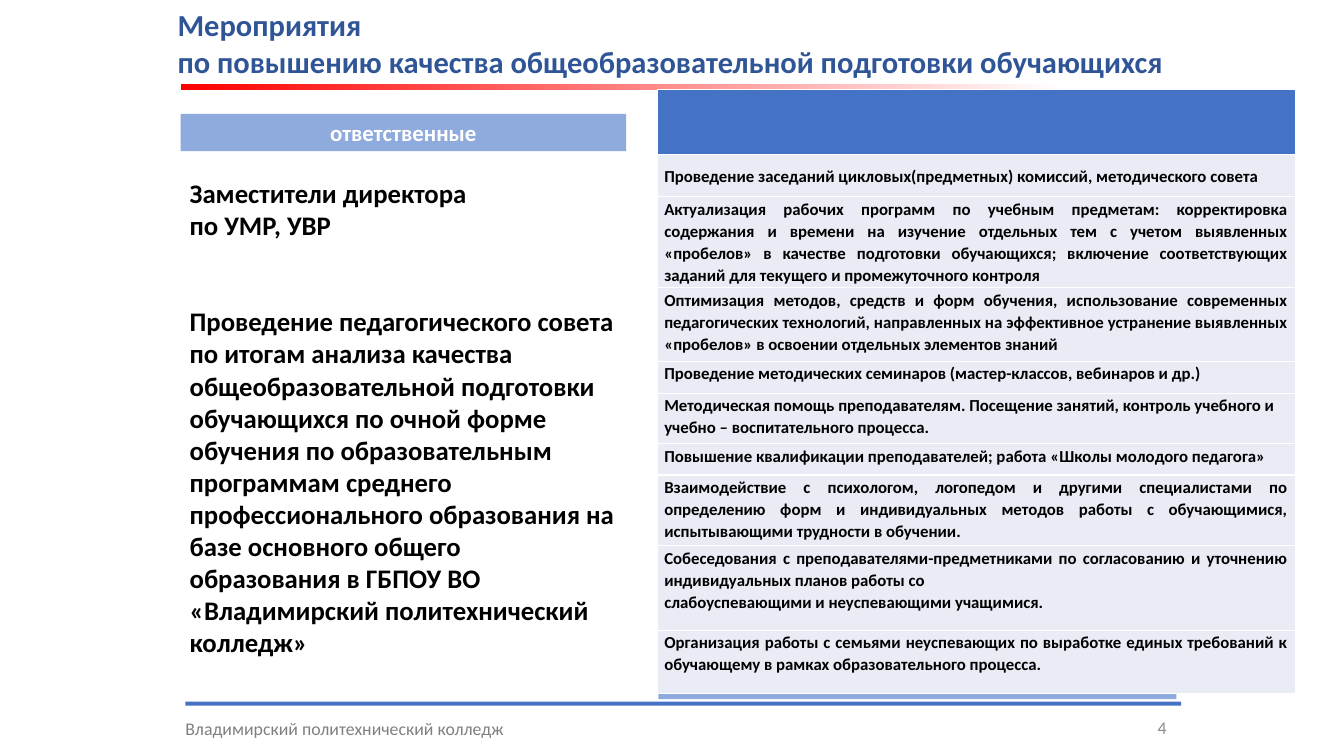
"""Build the slide on measures that improve general education training."""
from pptx import Presentation
from pptx.dml.color import RGBColor
from pptx.enum.shapes import MSO_SHAPE as Shape
from pptx.enum.text import MSO_ANCHOR as Anchor, MSO_AUTO_SIZE as AutoSize, PP_ALIGN as Align
from pptx.oxml.xmlchemy import OxmlElement
from pptx.util import Cm, Pt

BLUE = RGBColor(0x44, 0x72, 0xC4)
LIGHT_BLUE = RGBColor(0x8F, 0xAA, 0xDC)
DARK_BLUE = RGBColor(0x2F, 0x55, 0x97)
PALE = RGBColor(0xE9, 0xEB, 0xF5)
RED = RGBColor(0xFF, 0, 0)
WHITE = RGBColor(0xFF, 0xFF, 0xFF)
BLACK = RGBColor(0, 0, 0)
GREY = RGBColor(0x80, 0x80, 0x80)
NUMBER_GREY = RGBColor(0x8C, 0x8C, 0x8C)


def place(box, left, top, width, height):
    box.left, box.top, box.width, box.height = Cm(left), Cm(top), Cm(width), Cm(height)


def style(para, size, color, bold=True, align=Align.LEFT):
    para.alignment = align
    para.font.name, para.font.size, para.font.bold = "Calibri", Pt(size), bold
    para.font.color.rgb = color


deck = Presentation()
deck.slide_width, deck.slide_height = Cm(33.87), Cm(19.05)
page = deck.slides.add_slide(deck.slide_layouts[1])

title = page.shapes.title
place(title, 4.22, 0.03, 26.04, 3.05)
title.text_frame.text = "Мероприятия\nпо повышению качества общеобразовательной подготовки обучающихся"
title.text_frame.vertical_anchor = Anchor.TOP
title.text_frame.auto_size = AutoSize.NONE
for para in title.text_frame.paragraphs:
    style(para, 21.8, DARK_BLUE)
    para.space_before = Pt(0)

body = page.placeholders[1]
place(body, 4.55, 4.32, 11.23, 13.26)
frame = body.text_frame
frame.text = (
    "Заместители директора\nпо УМР, УВР\n"
    "Проведение педагогического совета по итогам анализа качества общеобразовательной "
    "подготовки обучающихся по очной форме обучения по образовательным программам среднего "
    "профессионального образования на базе основного общего образования в ГБПОУ ВО "
    "«Владимирский политехнический колледж»"
)
frame.auto_size = AutoSize.NONE
frame.margin_left = frame.margin_right = Cm(0.23)
for para, gap in zip(frame.paragraphs, (0, 0, 46)):
    style(para, 19.1, BLACK)
    para.space_before = Pt(gap)
    properties = para._p.get_or_add_pPr()
    properties.set("marL", "0")
    properties.set("indent", "0")
    properties.append(OxmlElement("a:buNone"))

bars = []
for left, top, width, height, color in (
    (16.59, 4.72, 13.06, 12.9, LIGHT_BLUE),
    (4.67, 17.68, 25.1, 0.1, BLUE),
    (4.55, 2.87, 11.23, 0.94, LIGHT_BLUE),
    (4.55, 2.13, 22.23, 0.13, RED),
):
    bar = page.shapes.add_shape(Shape.RECTANGLE, Cm(left), Cm(top), Cm(width), Cm(height))
    bar.shadow.inherit = False
    bar.fill.solid()
    bar.fill.fore_color.rgb = color
    bar.line.fill.background()
    bars.append(bar)

label, underline = bars[2:]
label.text_frame.text = "ответственные"
style(label.text_frame.paragraphs[0], 16.3, WHITE, align=Align.CENTER)
underline.fill.gradient()
underline.fill.gradient_angle = 0
for stop, color in zip(underline.fill.gradient_stops, (RED, WHITE)):
    stop.color.rgb = color

for text, left, width, height, inset, color, align in (
    ("Владимирский политехнический колледж", 4.67, 8.86, 1.09, 0, GREY, Align.LEFT),
    ("4", 23.93, 5.72, 1.02, 0.25, NUMBER_GREY, Align.RIGHT),
):
    box = page.shapes.add_textbox(Cm(left), Cm(17.81), Cm(width), Cm(height))
    frame = box.text_frame
    frame.word_wrap = True
    frame.vertical_anchor = Anchor.MIDDLE
    frame.margin_left = Cm(inset)
    frame.text = text
    style(frame.paragraphs[0], 12.7, color, False, align)

measures = [
    (1.63, ""),
    (1.07, "Проведение заседаний цикловых(предметных) комиссий, методического совета"),
    (2.29, "Актуализация рабочих программ по учебным предметам: корректировка содержания и времени "
           "на изучение отдельных тем с учетом выявленных «пробелов» в качестве подготовки обучающихся; "
           "включение соответствующих заданий для текущего и промежуточного контроля"),
    (1.85, "Оптимизация методов, средств и форм обучения, использование современных педагогических "
           "технологий, направленных на эффективное устранение выявленных «пробелов» в освоении "
           "отдельных элементов знаний"),
    (0.81, "Проведение методических семинаров (мастер-классов, вебинаров и др.)"),
    (1.27, "Методическая помощь преподавателям. Посещение занятий, контроль учебного и "
           "учебно – воспитательного процесса."),
    (0.79, "Повышение квалификации преподавателей; работа «Школы молодого педагога»"),
    (1.78, "Взаимодействие с психологом, логопедом и другими специалистами по определению форм и "
           "индивидуальных методов работы с обучающимися, испытывающими трудности в обучении."),
    (2.13, "Собеседования с преподавателями-предметниками по согласованию и уточнению "
           "индивидуальных планов работы со\nслабоуспевающими и неуспевающими учащимися."),
    (1.6, "Организация работы с семьями неуспевающих по выработке единых требований к обучающему "
          "в рамках образовательного процесса."),
]
table_height = sum(height for height, text in measures)
table = page.shapes.add_table(len(measures), 1, Cm(16.56), Cm(2.26), Cm(16.08), Cm(table_height)).table
table.horz_banding = False
for index, (height, text) in enumerate(measures):
    table.rows[index].height = Cm(height)
    cell = table.cell(index, 0)
    cell.fill.solid()
    cell.fill.fore_color.rgb = PALE if text else BLUE
    cell.margin_left = cell.margin_right = Cm(0.18)
    cell.margin_top, cell.margin_bottom = Cm(0.03), 0
    cell.vertical_anchor = Anchor.MIDDLE if index == 1 else Anchor.TOP
    cell.text = text
    for para in cell.text_frame.paragraphs:
        style(para, 12, BLACK, align=Align.LEFT if index == 5 else Align.JUSTIFY)
        para.line_spacing = 1.07

deck.save("out.pptx")
